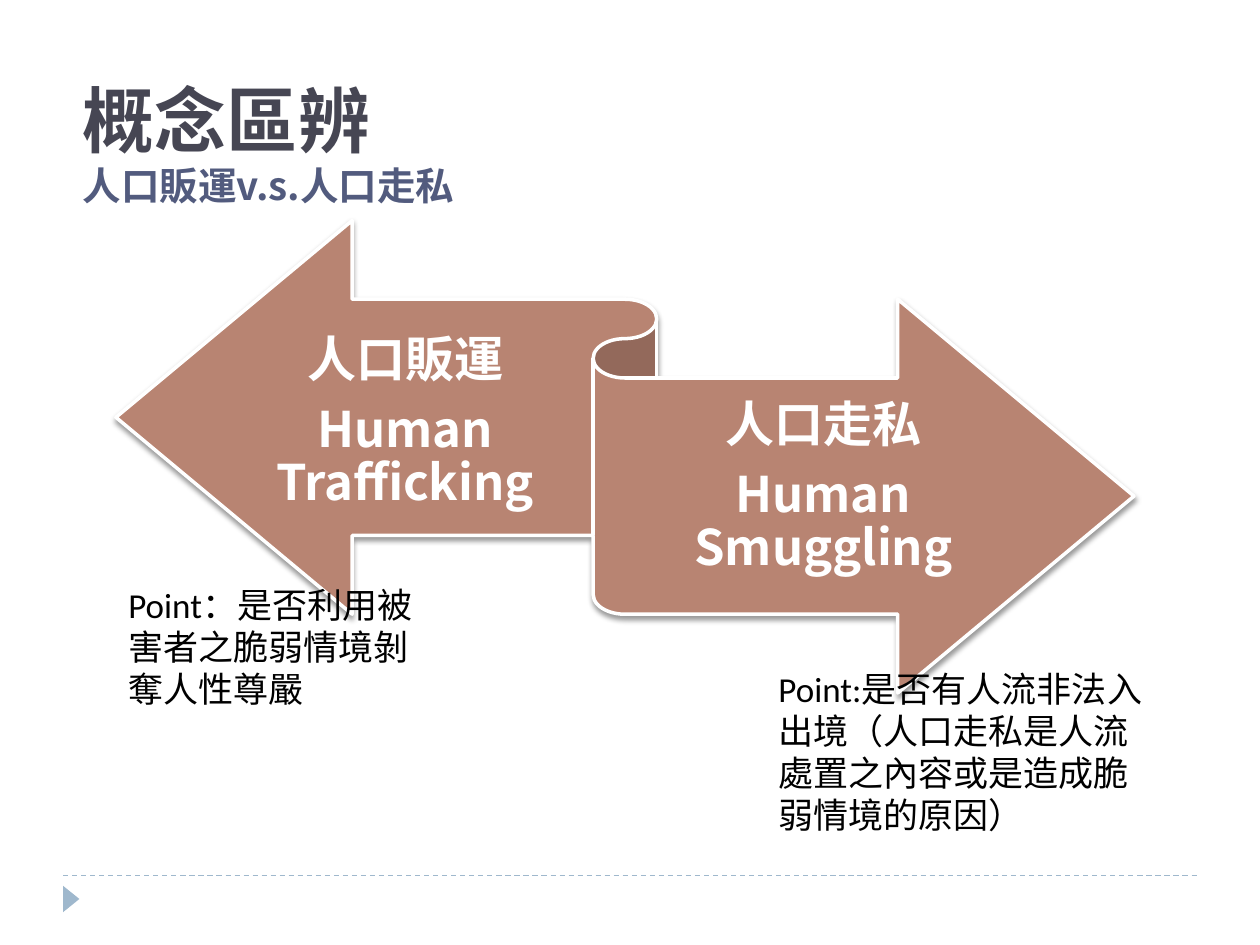
from lxml import etree
from pptx import Presentation
from pptx import util as u
from pptx.dml.color import RGBColor
from pptx.enum import dml, shapes, text
from pptx.oxml import parse_xml
from pptx.oxml.ns import qn

WHITE = RGBColor(255, 255, 255)
BLACK = RGBColor(0, 0, 0)
CLAY = RGBColor(0xB8, 0x84, 0x72)
SKY = RGBColor(0x9F, 0xB8, 0xCD)
SLATE = RGBColor(0x46, 0x46, 0x53)
NAVY = RGBColor(0x52, 0x5B, 0x7E)
SANS, BODY = "Noto Sans CJK SC", "Calibri"

TITLE = [("概念區辨", 41, SLATE), ("人口販運v.s.人口走私", 22, NAVY)]
ARROWS = [
    (("人口販運", "Human Trafficking"), (1.62, 2.31, 3.19, 2.11)),
    (("人口走私", "Human Smuggling"), (4.96, 3.09, 3.15, 1.58)),
]
POINTS = [
    ("Point：是否利用被害者之脆弱情境剝奪人性尊嚴", (0.92, 4.58, 2.5, 1.11)),
    ("Point:是否有人流非法入出境（人口走私是人流處置之內容或是造成脆弱情境的原因）",
     (6.08, 5.25, 3.25, 1.45)),
]
NS = "http://schemas.openxmlformats.org/drawingml/2006/main"
SHADE = (f'<a:effectLst xmlns:a="{NS}"><a:outerShdw blurRad="38100" dist="25400" '
         'dir="5400000" rotWithShape="0"><a:srgbClr val="000000">'
         '<a:alpha val="40000"/></a:srgbClr></a:outerShdw></a:effectLst>')


def inches(box):
    return [u.Inches(v) for v in box]


def style(font, name, size, color, bold=False):
    font.name, font.size, font.bold = name, u.Pt(size), bold
    font.color.rgb = color


def add_text(slide, box):
    frame = slide.shapes.add_textbox(*inches(box)).text_frame
    frame.word_wrap = True
    return frame


def add_shape(slide, kind, box, fill):
    shape = slide.shapes.add_shape(kind, *inches(box))
    shape.shadow.inherit = False
    shape.fill.solid()
    shape.fill.fore_color.rgb = fill
    shape.line.fill.background()
    return shape


def add_footer(slide):
    y = 6.95
    rule = slide.shapes.add_connector(
        shapes.MSO_CONNECTOR.STRAIGHT, *inches((0.5, y, 9.5, y)))
    rule.line.color.rgb = SKY
    rule.line.width = u.Pt(0.75)
    rule.line.dash_style = dml.MSO_LINE.DASH
    etree.SubElement(rule._element.spPr, qn("a:effectLst"))
    mark = add_shape(slide, shapes.MSO_SHAPE.ISOSCELES_TRIANGLE,
                     (0.46, 7.07, 0.21, 0.13), SKY)
    mark.rotation = 90


def add_ribbon(slide):
    band = add_shape(slide, shapes.MSO_SHAPE.LEFT_RIGHT_RIBBON,
                     (0.92, 1.75, 8.08, 3.75), CLAY)
    band.line.color.rgb = WHITE
    band.line.width = u.Pt(2)
    props = band._element.spPr
    props.replace(props.find(qn("a:effectLst")), parse_xml(SHADE))
    for lines, box in ARROWS:
        frame = add_text(slide, box)
        frame.vertical_anchor = text.MSO_ANCHOR.MIDDLE
        frame.margin_left = frame.margin_right = 0
        frame.margin_top, frame.margin_bottom = inches((0.11, 0.12))
        frame.text = "\n".join(lines)
        for para in frame.paragraphs:
            para.alignment = text.PP_ALIGN.CENTER
            para.line_spacing = 0.9
            para.space_after = u.Pt(10)
            style(para.font, SANS, 28, WHITE, True)


def add_title(slide):
    frame = add_text(slide, (0.56, 0.5, 9, 1.25))
    frame.vertical_anchor = text.MSO_ANCHOR.MIDDLE
    para = frame.paragraphs[0]
    for i, (words, size, color) in enumerate(TITLE):
        if i:
            para.add_line_break()
        run = para.add_run()
        run.text = words
        style(run.font, SANS, size, color, True)


def main():
    deck = Presentation()
    deck.slide_width, deck.slide_height = inches((10, 7.5))
    slide = deck.slides.add_slide(deck.slide_layouts[6])
    add_footer(slide)
    add_ribbon(slide)
    for words, box in POINTS:
        frame = add_text(slide, box)
        frame.text = words
        style(frame.paragraphs[0].font, BODY, 20, BLACK)
    add_title(slide)
    deck.save("out.pptx")


if __name__ == "__main__":
    main()
